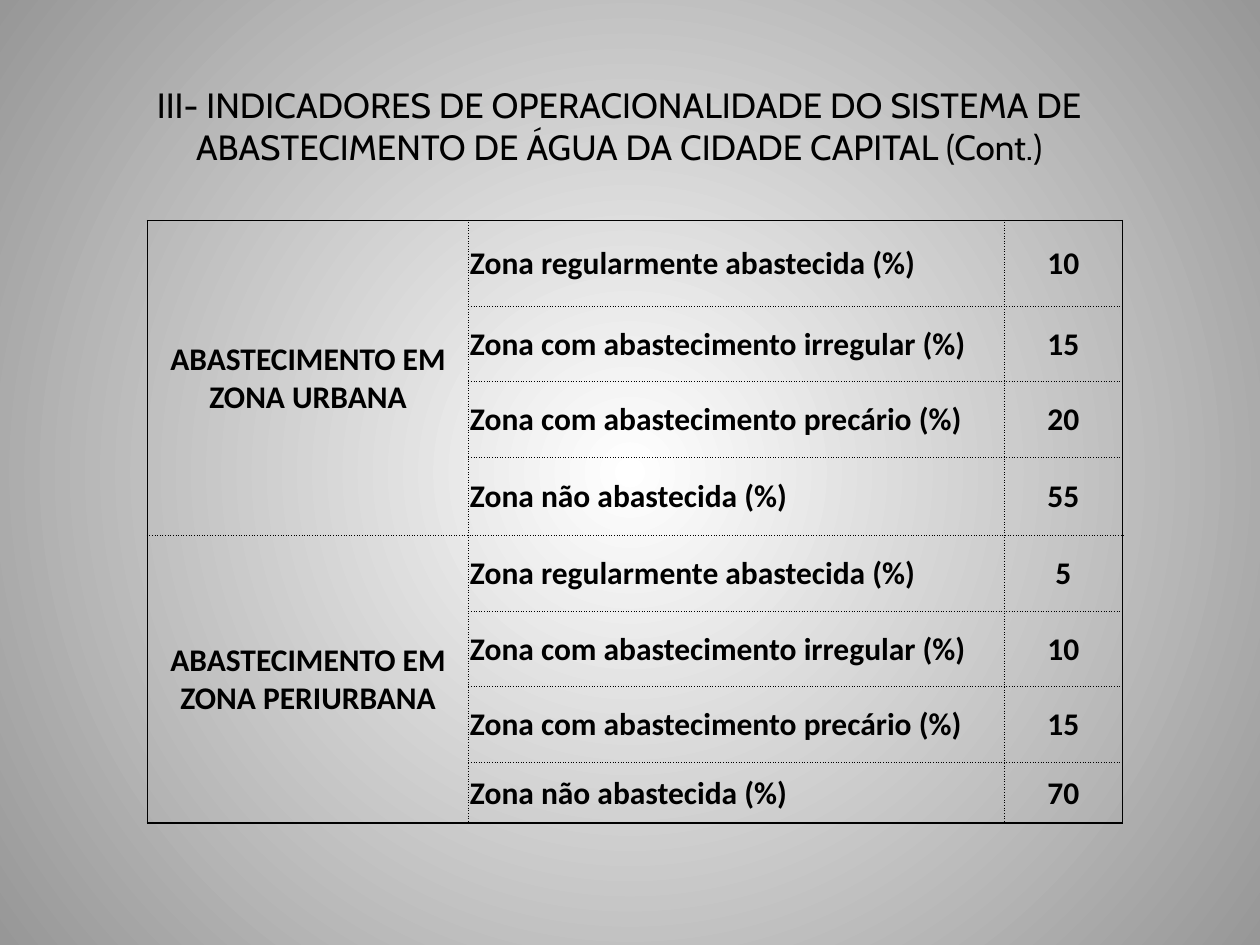
from lxml.etree import SubElement
from pptx import Presentation
from pptx.dml.color import RGBColor
from pptx.enum.text import MSO_ANCHOR as Anchor, MSO_AUTO_SIZE as AutoSize, PP_ALIGN as Align
from pptx.oxml.ns import qn
from pptx.util import Inches, Pt

TITLE = ("III- INDICADORES DE OPERACIONALIDADE DO SISTEMA DE "
         "ABASTECIMENTO DE ÁGUA DA CIDADE CAPITAL (Cont.)")
INDICATORS = ["Zona regularmente abastecida (%)",
              "Zona com abastecimento irregular (%)",
              "Zona com abastecimento precário (%)",
              "Zona não abastecida (%)"]
ZONES = {"ABASTECIMENTO EM ZONA URBANA": [10, 15, 20, 55],
         "ABASTECIMENTO EM ZONA PERIURBANA": [5, 10, 15, 70]}
COLUMNS = [2.55, 4.25, 0.94]
ROWS = [0.68, 0.6, 0.6, 0.62, 0.6, 0.6, 0.6, 0.48]


def write(frame, text, size, font, bold=False, align=Align.CENTER, color="000000"):
    para = frame.paragraphs[0]
    para.alignment = align
    span = para.add_run()
    span.text = text
    span.font.size = Pt(size)
    span.font.name = font
    span.font.bold = bold
    span.font.color.rgb = RGBColor.from_string(color)


def add_border(cell, side, outer):
    """Draw a solid 1 pt line on an outer edge, a dotted half-point line elsewhere."""
    line = SubElement(cell._tc.get_or_add_tcPr(), qn(f"a:ln{side}"),
                      w=str(Pt(1 if outer else 0.5)))
    fill = SubElement(line, qn("a:solidFill"))
    SubElement(fill, qn("a:srgbClr"), val="000000")
    SubElement(line, qn("a:prstDash"), val="solid" if outer else "sysDot")


deck = Presentation()
deck.slide_width, deck.slide_height = Inches(10), Inches(7.5)
page = deck.slides.add_slide(deck.slide_layouts[5])

# Radial background, white in the centre
background = page.background.fill
background.gradient()
for stop, color in zip(background.gradient_stops, ["FFFFFF", "979797"]):
    stop.color.rgb = RGBColor.from_string(color)
gradient = next(page.element.iter(qn("a:gradFill")))
gradient.remove(gradient.find(qn("a:lin")))
circle = SubElement(gradient, qn("a:path"), path="circle")
SubElement(circle, qn("a:fillToRect"), l="50000", t="50000", r="50000", b="50000")

title = page.shapes.title
title.left, title.top = Inches(0.75), Inches(0.33)
title.width, title.height = Inches(8.33), Inches(1.33)
title.text_frame.auto_size = AutoSize.NONE
title.text_frame.vertical_anchor = Anchor.MIDDLE
write(title.text_frame, TITLE, 20, "Cabin")

table = page.shapes.add_table(len(ROWS), len(COLUMNS), Inches(1.17), Inches(1.75),
                              Inches(sum(COLUMNS)), Inches(sum(ROWS))).table
table.first_row = table.horz_banding = False
for column, width in zip(table.columns, COLUMNS):
    column.width = Inches(width)
for row, height in zip(table.rows, ROWS):
    row.height = Inches(height)

group = len(INDICATORS)
for index, (zone, values) in enumerate(ZONES.items()):
    first = index * group
    heading = table.cell(first, 0)
    heading.merge(table.cell(first + group - 1, 0))
    write(heading.text_frame, zone, 18, "Calibri", bold=True)
    for row, (indicator, value) in enumerate(zip(INDICATORS, values), first):
        write(table.cell(row, 1).text_frame, indicator, 18, "Calibri",
              bold=True, align=Align.LEFT)
        write(table.cell(row, 2).text_frame, str(value), 18, "Calibri", bold=True)

for row in range(len(ROWS)):
    for column in range(len(COLUMNS)):
        cell = table.cell(row, column)
        last = row + (cell.span_height if cell.is_merge_origin else 1)
        add_border(cell, "L", column == 0)
        add_border(cell, "R", column == len(COLUMNS) - 1)
        add_border(cell, "T", row == 0)
        add_border(cell, "B", last == len(ROWS))
        cell.fill.background()
        cell.vertical_anchor = Anchor.MIDDLE
        cell.margin_left = cell.margin_right = cell.margin_top = Inches(0.01)
        cell.margin_bottom = 0

deck.save("out.pptx")
